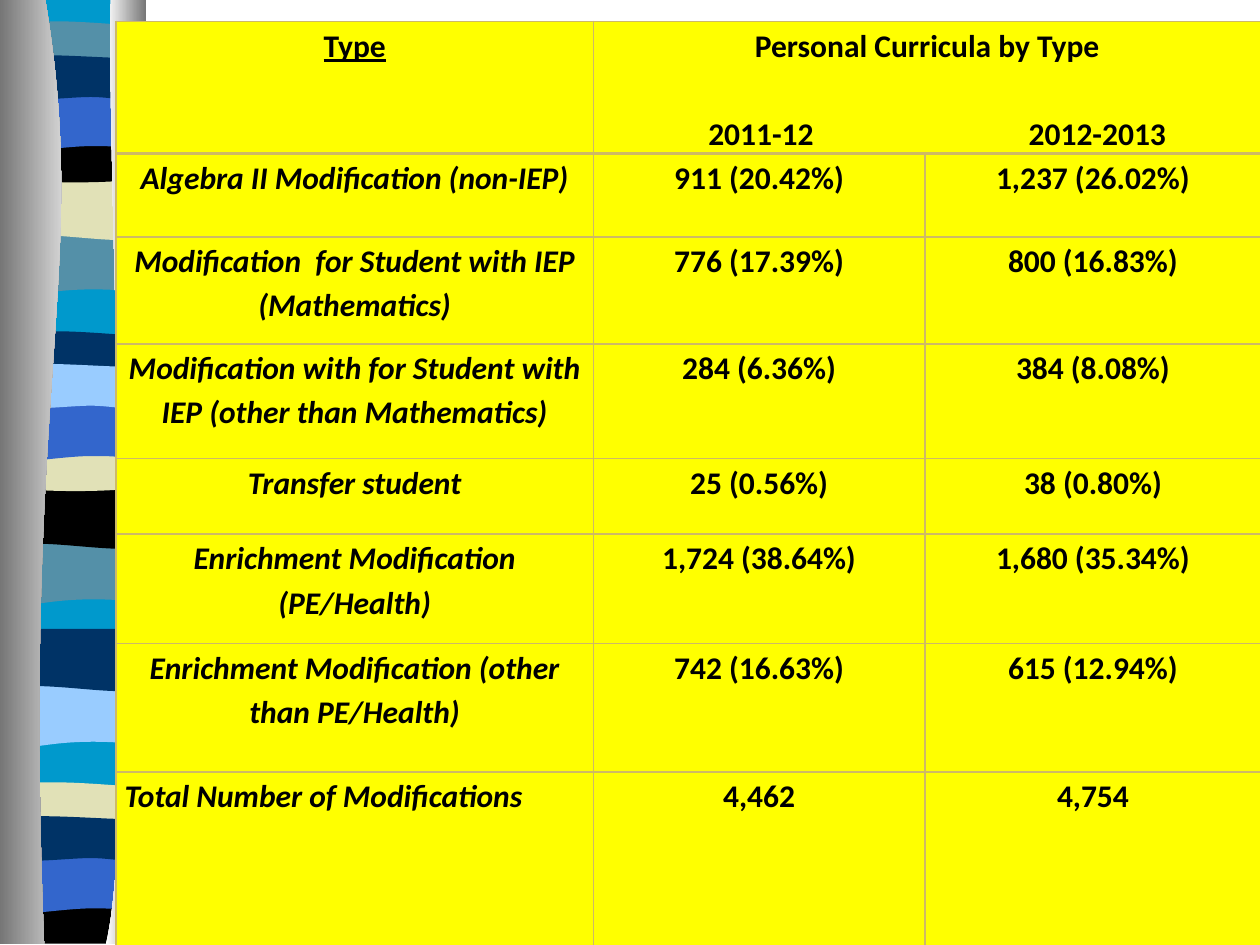
from dataclasses import dataclass
from typing import NamedTuple

from lxml.etree import SubElement
from pptx import Presentation
from pptx.dml.color import RGBColor as Rgb
from pptx.enum.text import PP_ALIGN as Align
from pptx.oxml import parse_xml
from pptx.oxml.ns import nsdecls, qn
from pptx.util import Inches, Pt


@dataclass(frozen=True)
class Theme:
    cyan: str = "0099CC"
    slate: str = "5490A8"
    sand: str = "E1E1B7"
    black: str = "000000"
    blue: str = "3366CC"
    navy: str = "003366"
    sky: str = "99CCFF"
    white: str = "FFFFFF"
    grey: str = "767676"
    cell: str = "FFFF00"
    border: str = "CEB966"
    font: str = "Calibri"
    size: float = 18
    line_spacing: float = 1.15


THEME = Theme()
LEFT, RIGHT = 0.05, 1.14

# Edges of a band: points and Bezier triples, with y measured from the band's top
TOP = [(LEFT, 0), (RIGHT, 0)]
OUTLINES = {
    "swell": [(RIGHT, 0.47), ((0.39, 0.39), (0.24, 0.55), (LEFT, 0.47)), *TOP],
    "dip": [(RIGHT, 0.47), ((0.96, 0.55), (0.39, 0.41), (LEFT, 0.47)), *TOP],
    "ribbon": [(RIGHT, 0.24), ((0.96, 0.29), (0.24, 0.29), (LEFT, 0.24)), (LEFT, 0),
               ((0.12, -0.05), (0.29, -0.04), (0.47, -0.04)),
               ((0.65, -0.04), (1, -0.01), (RIGHT, 0))],
    "bowl": [(RIGHT, 0.33), ((0.96, 0.38), (0.24, 0.38), (LEFT, 0.33)), (LEFT, 0),
             ((0.72, 0.05), (0.91, 0), (RIGHT, 0))],
    "arch": [(RIGHT, 0.47), ((0.97, 0.42), (0.9, 0.42), (0.72, 0.42)),
             ((0.54, 0.42), (0.22, 0.47), (LEFT, 0.47)), *TOP],
    "wave": [(RIGHT, 0.31), ((1.07, 0.36), (0.9, 0.31), (0.72, 0.31)),
             ((0.54, 0.31), (0.17, 0.36), (LEFT, 0.31)), (LEFT, 0),
             ((0.21, -0.05), (0.79, 0), (0.97, 0)), ((1.15, 0), (1.1, 0), (RIGHT, 0))],
    "base": [(RIGHT, 7.47), (LEFT, 7.47), *TOP],
    "foot": [(RIGHT, 0.37), (LEFT, 0.37), (LEFT, 0),
             ((0.72, 0.05), (0.91, 0), (RIGHT, 0))],
}


class Band(NamedTuple):
    outline: str
    top: float
    color: str


BANDS = [
    Band("base", 0, THEME.cyan),
    Band("swell", 1.85, THEME.slate), Band("dip", 1.41, THEME.sand),
    Band("ribbon", 0.21, THEME.slate), Band("bowl", 1.08, THEME.black),
    Band("arch", 0.74, THEME.blue), Band("wave", 0.46, THEME.navy),
    Band("swell", 4.31, THEME.slate), Band("dip", 3.86, THEME.black),
    Band("ribbon", 2.67, THEME.navy), Band("bowl", 3.53, THEME.sand),
    Band("arch", 3.2, THEME.blue), Band("wave", 2.91, THEME.sky),
    Band("swell", 5.44, THEME.sky), Band("dip", 4.99, THEME.navy),
    Band("ribbon", 6.25, THEME.sand), Band("foot", 7.12, THEME.black),
    Band("arch", 6.79, THEME.blue), Band("wave", 6.5, THEME.navy),
]


class Row(NamedTuple):
    height: float
    label: str
    first_year: str
    second_year: str


COLUMN_WIDTHS = (3.79, 2.63, 2.67)
HEADER_HEIGHT = 1
YEAR_TABS = (1.26, 3.93)
ROWS = [
    Row(0.66, "Algebra II Modification (non-IEP)", "911 (20.42%)", "1,237 (26.02%)"),
    Row(0.85, "Modification  for Student with IEP (Mathematics)",
        "776 (17.39%)", "800 (16.83%)"),
    Row(0.91, "Modification with for Student with IEP (other than Mathematics)",
        "284 (6.36%)", "384 (8.08%)"),
    Row(0.6, "Transfer student", "25 (0.56%)", "38 (0.80%)"),
    Row(0.87, "Enrichment Modification (PE/Health)", "1,724 (38.64%)", "1,680 (35.34%)"),
    Row(1.02, "Enrichment Modification (other than PE/Health)",
        "742 (16.63%)", "615 (12.94%)"),
    Row(1.43, "Total Number of Modifications", "4,462", "4,754"),
]


def draw_outline(page, start: tuple, segments: list, colors: tuple, top: float = 0) -> None:
    """Draw a closed shape with a plain fill or a left-to-right gradient."""
    curved = [isinstance(segment[0], tuple) for segment in segments]
    points = [start]
    for segment, is_curve in zip(segments, curved):
        points.extend(segment if is_curve else [segment])
    first, *rest = [(Inches(x), Inches(y + top)) for x, y in points]
    builder = page.shapes.build_freeform(*first)
    builder.add_line_segments(rest, close=True)
    shape = builder.convert_to_shape()

    # Join three line steps into one Bezier step wherever the segment is a curve
    steps = iter(list(shape._element.iter(qn("a:lnTo"))))
    for is_curve in curved:
        step = next(steps)
        if is_curve:
            curve = parse_xml(f'<a:cubicBezTo {nsdecls("a")}/>')
            step.addprevious(curve)
            for part in (step, next(steps), next(steps)):
                curve.append(part[0])
                part.getparent().remove(part)

    shape.shadow.inherit = False
    shape.line.fill.background()
    if len(colors) == 1:
        shape.fill.solid()
        shape.fill.fore_color.rgb = Rgb.from_string(colors[0])
    else:
        shape.fill.gradient()
        shape.fill.gradient_angle = 0
        for stop, color in zip(shape.fill.gradient_stops, colors):
            stop.color.rgb = Rgb.from_string(color)


def style_cell(cell, top: float = 1, bottom: float = 1) -> None:
    """Set insets, borders (widths in points) and fill."""
    cell.margin_left = cell.margin_right = Inches(0.07)
    cell.margin_top = cell.margin_bottom = 0
    properties = cell._tc.get_or_add_tcPr()
    for index, (side, width) in enumerate(zip("LRTB", (1, 1, top, bottom))):
        properties.insert(index, parse_xml(
            f'<a:ln{side} {nsdecls("a")} w="{Pt(width)}"><a:solidFill>'
            f'<a:srgbClr val="{THEME.border}"/></a:solidFill></a:ln{side}>'))
    cell.fill.solid()
    cell.fill.fore_color.rgb = Rgb.from_string(THEME.cell)


def style_para(para, align=Align.CENTER, italic: bool = False, underline: bool = False) -> None:
    para.alignment = align
    para.line_spacing = THEME.line_spacing
    for span in para.runs:
        font = span.font
        font.name, font.size, font.bold = THEME.font, Pt(THEME.size), True
        font.italic, font.underline = italic, underline
        font.color.rgb = Rgb.from_string(THEME.black)


def draw_table(page) -> None:
    heights = [HEADER_HEIGHT, *(row.height for row in ROWS)]
    frame = page.shapes.add_table(len(heights), len(COLUMN_WIDTHS), Inches(0.92), Inches(0.17),
                                  Inches(sum(COLUMN_WIDTHS)), Inches(sum(heights)))
    table = frame.table
    table.first_row = table.horz_banding = False
    for column, width in zip(table.columns, COLUMN_WIDTHS):
        column.width = Inches(width)
    for table_row, height in zip(table.rows, heights):
        table_row.height = Inches(height)

    # Header: the years sit on centred tab stops in the merged cell
    for cell in table.rows[0].cells:
        style_cell(cell, bottom=2.25)
    table.cell(0, 1).merge(table.cell(0, 2))
    table.cell(0, 0).text_frame.text = "Type"
    style_para(table.cell(0, 0).text_frame.paragraphs[0], underline=True)
    table.cell(0, 1).text_frame.text = "Personal Curricula by Type\n\t2011-12\t2012-2013"
    title, years = table.cell(0, 1).text_frame.paragraphs
    style_para(title)
    style_para(years, Align.LEFT)
    years.space_before = Pt(25)
    tab_list = SubElement(years._p.get_or_add_pPr(), qn("a:tabLst"))
    for position in YEAR_TABS:
        SubElement(tab_list, qn("a:tab"), pos=str(Inches(position)), algn="ctr")

    # Body
    for index, row in enumerate(ROWS, start=1):
        for column, text in enumerate(row[1:]):
            cell = table.cell(index, column)
            style_cell(cell, top=2.25 if index == 1 else 1)
            cell.text_frame.text = text
            is_total = column == 0 and index == len(ROWS)
            style_para(cell.text_frame.paragraphs[0],
                       Align.LEFT if is_total else Align.CENTER, italic=column == 0)


def main() -> None:
    deck = Presentation()
    deck.slide_width, deck.slide_height = Inches(10), Inches(7.5)
    page = deck.slides.add_slide(deck.slide_layouts[6])

    # Striped ribbon
    for band in BANDS:
        draw_outline(page, (RIGHT, 0), OUTLINES[band.outline], (band.color,), band.top)

    # Shaded edges of the ribbon
    left_edge = [((0.72, 2.16), (0.17, 2.96), (0.35, 7.49)), (0, 7.49), (0, 0)]
    draw_outline(page, (0.36, 0), left_edge, (THEME.grey, THEME.white))
    right_edge = [((0.84, 1.25), (1.11, 6.46), (0.84, 7.49)), (1.16, 7.49), (1.16, 0)]
    draw_outline(page, (0.88, 0), right_edge, (THEME.white, THEME.grey))

    draw_table(page)
    deck.save("out.pptx")


if __name__ == "__main__":
    main()
